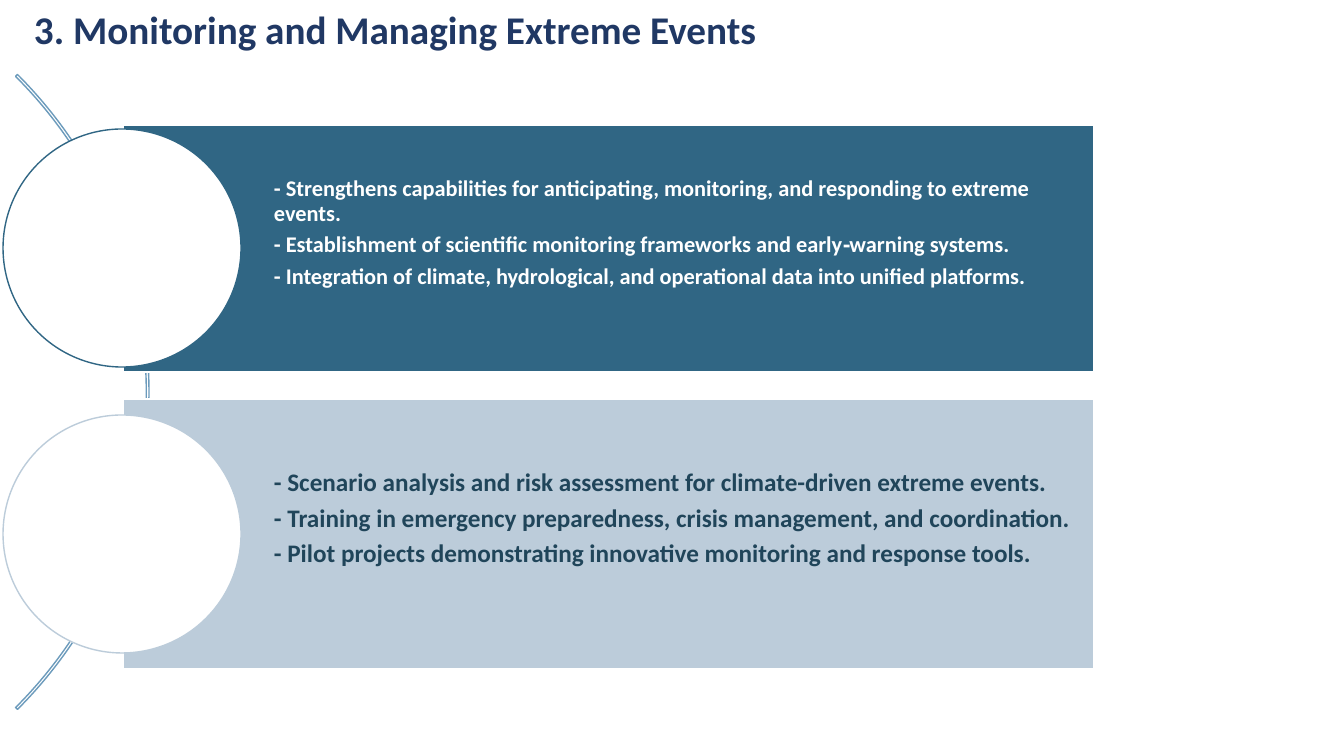
from pptx import Presentation, util as u
from pptx.dml.color import RGBColor
from pptx.enum import shapes, text

FONT = "Calibri"
HUES = {"title": "203864", "arc": "6C9BBC", "deep": "306684",
        "pale": "BCCCDA", "ink": "20455A", "white": "FFFFFF"}
DISC = 238

BANDS = [
    ((123, 125, 971, 247), "deep", "white", 16, [
        "- Strengthens capabilities for anticipating, monitoring, and responding to extreme events.",
        "- Establishment of scientific monitoring frameworks and early‑warning systems.",
        "- Integration of climate, hydrological, and operational data into unified platforms."]),
    ((123, 399, 971, 270), "pale", "ink", 18, [
        "- Scenario analysis and risk assessment for climate-driven extreme events.",
        "- Training in emergency preparedness, crisis management, and coordination.",
        "- Pilot projects demonstrating innovative monitoring and response tools."]),
]


def px(n):
    return u.Emu(round(n * 9525 / 1.05))


def hue(name):
    return RGBColor.from_string(HUES[name])


def shape(slide, kind, box, fill, line):
    item = slide.shapes.add_shape(kind, *map(px, box))
    item.shadow.inherit = False
    if fill:
        item.fill.solid()
        item.fill.fore_color.rgb = hue(fill)
    else:
        item.fill.background()
    item.line.color.rgb = hue(line)
    item.line.width = u.Pt(1)
    return item


def write(item, lines, size, ink, pads, anchor):
    frame = item.text_frame
    frame.word_wrap = True
    frame.vertical_anchor = anchor
    (frame.margin_left, frame.margin_top,
     frame.margin_right, frame.margin_bottom) = map(px, pads)
    for i, line in enumerate(lines):
        para = frame.add_paragraph() if i else frame.paragraphs[0]
        para.text = line
        para.alignment = text.PP_ALIGN.LEFT
        if len(lines) > 1:
            para.line_spacing = 0.9
        if i:
            para.space_before = u.Pt(round(size * 0.34, 1))
        font = para.font
        font.name, font.size, font.bold = FONT, u.Pt(size), True
        font.color.rgb = hue(ink)


def title(slide, box):
    item = slide.shapes.add_textbox(*map(px, box))
    write(item, ["3. Monitoring and Managing Extreme Events"], 28, "title",
          (10, 5, 10, 5), text.MSO_ANCHOR.TOP)


def arc(slide, box):
    item = shape(slide, shapes.MSO_SHAPE.BLOCK_ARC, box, None, "arc")
    # Sweep from 315 to 45 degrees, then the ring's thickness
    for i, value in enumerate((189, 27, 0.003)):
        item.adjustments[i] = value


def band(slide, box, fill, ink, size, lines):
    x, y, w, h = box
    bar = shape(slide, shapes.MSO_SHAPE.RECTANGLE, box, fill, "white")
    # The deep bottom inset lifts the text above the middle
    write(bar, lines, size, ink, (151, 4, 4, 34), text.MSO_ANCHOR.MIDDLE)
    # Disc centred on the band's left edge
    spot = (x - DISC // 2 - 1, y + (h - DISC) // 2, DISC, DISC)
    shape(slide, shapes.MSO_SHAPE.OVAL, spot, "white", fill)


def main():
    deck = Presentation()
    deck.slide_width, deck.slide_height = px(1344), px(756)
    slide = deck.slides.add_slide(deck.slide_layouts[6])
    title(slide, (24, 0, 1050, 57))
    arc(slide, (-749, -57, 898, 898))
    for part in BANDS:
        band(slide, *part)
    deck.save("out.pptx")


if __name__ == "__main__":
    main()
